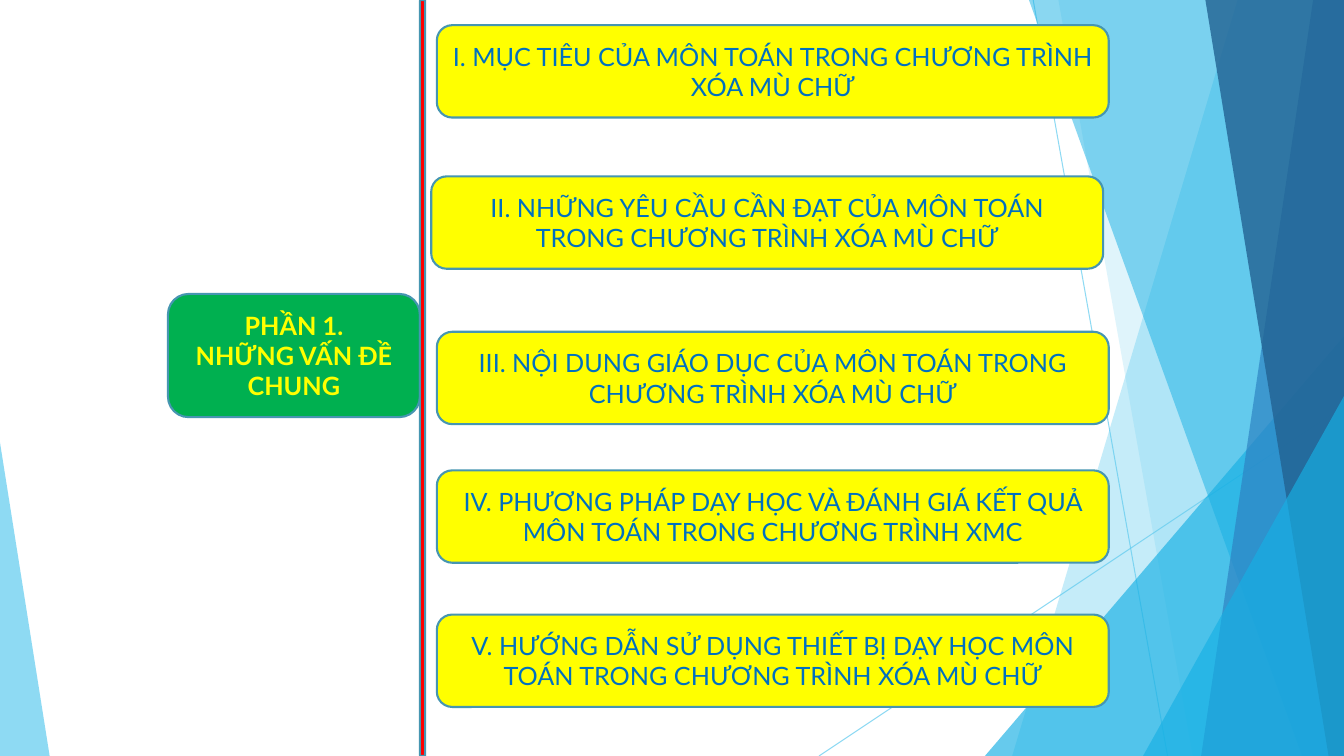
from dataclasses import dataclass

from lxml.etree import SubElement
from pptx import Presentation
from pptx.dml.color import RGBColor
from pptx.enum.shapes import MSO_CONNECTOR, MSO_SHAPE
from pptx.enum.text import MSO_ANCHOR, PP_ALIGN
from pptx.oxml.ns import qn
from pptx.util import Pt

WIDTH, HEIGHT = 960, 540


@dataclass(frozen=True)
class Theme:
    font: str = "Lato"
    text_size: int = 18
    outline_width: float = 1.5
    hairline_width: float = 0.75
    sky: str = "5FCBEF"
    cyan: str = "17B0E4"
    blue: str = "2E83C3"
    navy: str = "226292"
    outline: str = "4696B1"
    part_fill: str = "00B050"
    part_text: str = "FFFF00"
    divider: str = "FF0000"
    topic_fill: str = "FFFF00"
    topic_text: str = "0070C0"


class SlideBuilder:
    def __init__(self, page, theme):
        self.page = page
        self.theme = theme

    def paint(self, fill, color, opacity=100):
        """Apply a solid colour with an opacity in percent."""
        fill.solid()
        fill.fore_color.rgb = RGBColor.from_string(color)
        if opacity < 100:
            for element in fill._xPr.iter(qn("a:srgbClr")):
                SubElement(element, qn("a:alpha")).set("val", str(opacity * 1000))

    def hairline(self, start, end, opacity):
        points = [Pt(value) for value in (*start, *end)]
        line = self.page.shapes.add_connector(MSO_CONNECTOR.STRAIGHT, *points)
        line.line.width = Pt(self.theme.hairline_width)
        self.paint(line.line.fill, self.theme.sky, opacity)
        SubElement(line._element.spPr, qn("a:effectLst"))

    def decorate(self, shape, color, opacity):
        shape.shadow.inherit = False
        self.paint(shape.fill, color, opacity)
        shape.line.fill.background()

    def band(self, top_x, bottom_x, color, opacity):
        """Fill the page from a slanted left edge to the right border."""
        builder = self.page.shapes.build_freeform(top_x, 0, scale=Pt(1))
        builder.add_line_segments([(WIDTH, 0), (WIDTH, HEIGHT), (bottom_x, HEIGHT)])
        self.decorate(builder.convert_to_shape(), color, opacity)

    def corner(self, left, top, width, apex, color, opacity):
        """Draw a triangle standing on the bottom border; apex is 0 left, 1 right."""
        triangle = self.page.shapes.add_shape(
            MSO_SHAPE.ISOSCELES_TRIANGLE, Pt(left), Pt(top), Pt(width), Pt(HEIGHT - top))
        triangle.adjustments[0] = apex
        self.decorate(triangle, color, opacity)

    def rounded_box(self, left, top, width, height, color):
        box = self.page.shapes.add_shape(
            MSO_SHAPE.ROUNDED_RECTANGLE, Pt(left), Pt(top), Pt(width), Pt(height))
        box.shadow.inherit = False
        self.paint(box.fill, color)
        box.line.width = Pt(self.theme.outline_width)
        self.paint(box.line.fill, self.theme.outline)
        return box

    def label(self, box, lines, color, bold=False):
        frame = box.text_frame
        frame.word_wrap = True
        frame.vertical_anchor = MSO_ANCHOR.MIDDLE
        for index, line in enumerate(lines):
            para = frame.add_paragraph() if index else frame.paragraphs[0]
            para.text = line
            para.alignment = PP_ALIGN.CENTER
            para.font.name = self.theme.font
            para.font.size = Pt(self.theme.text_size)
            para.font.bold = bold
            para.font.color.rgb = RGBColor.from_string(color)


TOPICS = [
    (312, 18, "I. MỤC TIÊU CỦA MÔN TOÁN TRONG CHƯƠNG TRÌNH XÓA MÙ CHỮ"),
    (308, 126, "II. NHỮNG YÊU CẦU CẦN ĐẠT CỦA MÔN TOÁN TRONG CHƯƠNG TRÌNH XÓA MÙ CHỮ"),
    (312, 237, "III. NỘI DUNG GIÁO DỤC CỦA MÔN TOÁN TRONG CHƯƠNG TRÌNH XÓA MÙ CHỮ"),
    (312, 336, "IV. PHƯƠNG PHÁP DẠY HỌC VÀ ĐÁNH GIÁ KẾT QUẢ MÔN TOÁN TRONG CHƯƠNG TRÌNH XMC"),
    (312, 439, "V. HƯỚNG DẪN SỬ DỤNG THIẾT BỊ DẠY HỌC MÔN TOÁN TRONG CHƯƠNG TRÌNH XÓA MÙ CHỮ"),
]


def draw_background(slide):
    theme = slide.theme
    slide.hairline((738, 0), (834, HEIGHT), 70)
    slide.hairline((WIDTH, 290), (585, HEIGHT), 70)
    slide.band(884, 723, theme.sky, 36)
    slide.band(756, 852, theme.sky, 20)
    slide.corner(703.5, 240, 256.5, 1, theme.cyan, 66)
    slide.band(735, 929.5, theme.cyan, 50)
    slide.band(938, 858, theme.blue, 70)
    slide.band(861, 949, theme.navy, 80)
    slide.corner(816.5, 283, 143.5, 1, theme.cyan, 66)
    slide.corner(0, 316, 35.5, 0, theme.sky, 70)


def draw_outline(slide):
    theme = slide.theme
    part = slide.rounded_box(120, 210, 180, 88, theme.part_fill)
    slide.label(part, ["PHẦN 1.", "NHỮNG VẤN ĐỀ CHUNG"], theme.part_text, bold=True)
    slide.rounded_box(300, 0, 3.75, HEIGHT, theme.divider)
    for left, top, text in TOPICS:
        topic = slide.rounded_box(left, top, 480, 66, theme.topic_fill)
        slide.label(topic, [text], theme.topic_text)


def main():
    deck = Presentation()
    deck.slide_width, deck.slide_height = Pt(WIDTH), Pt(HEIGHT)
    blank_layout = deck.slide_layouts[6]
    slide = SlideBuilder(deck.slides.add_slide(blank_layout), Theme())
    draw_background(slide)
    draw_outline(slide)
    deck.save("out.pptx")


if __name__ == "__main__":
    main()
